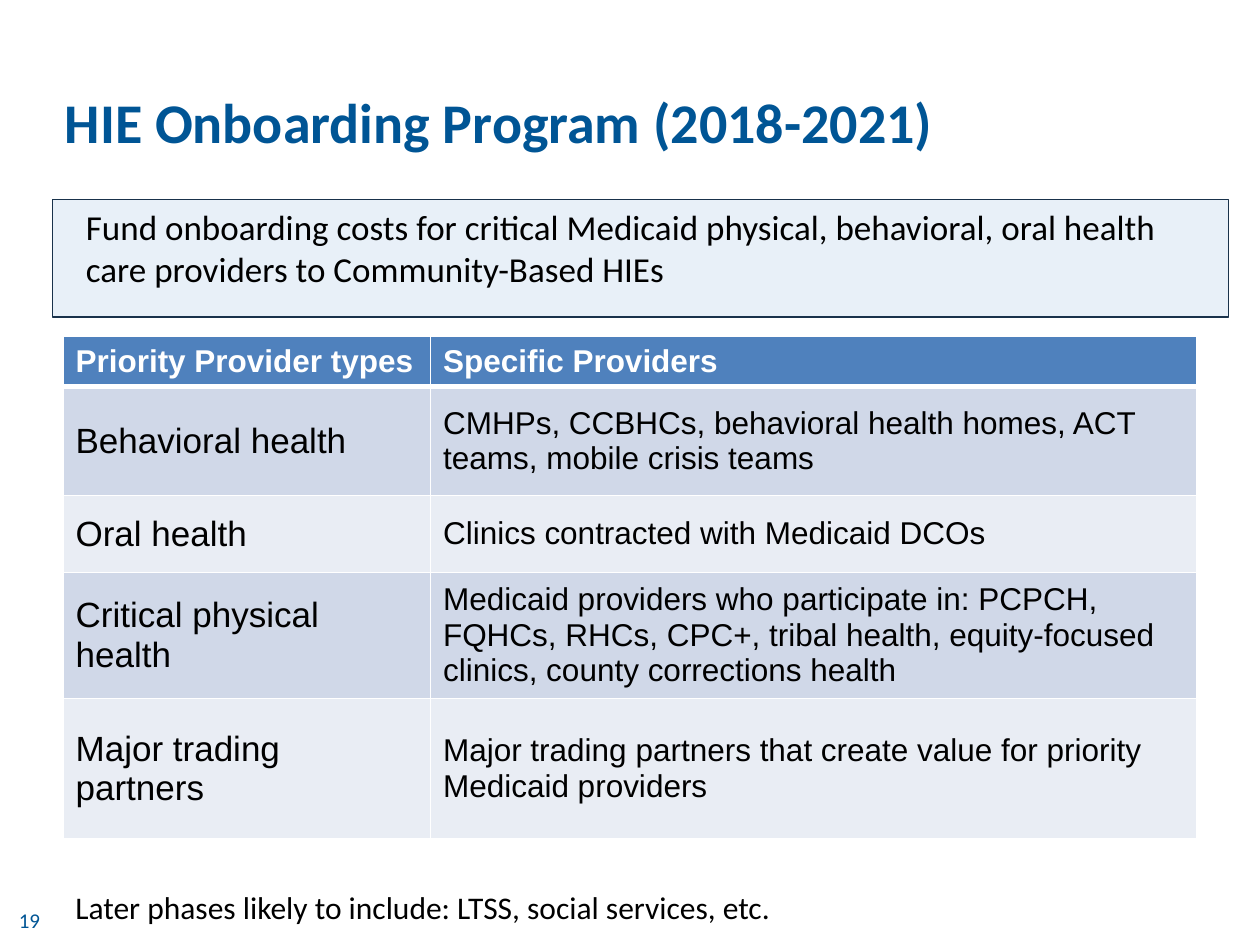
from lxml import etree
from pptx import Presentation
from pptx.dml.color import RGBColor
from pptx.enum import shapes, text
from pptx.oxml import ns
from pptx.util import Inches, Pt

HUES = {"blue": "005595", "navy": "19324B", "pale": "E8F0F8", "head": "4F81BD",
        "odd": "D0D8E8", "even": "E9EDF4", "black": "000000", "white": "FFFFFF"}

# The slide is a grid of 120 columns by 90 rows
COLS, ROWS = 120, 90
WIDE, HIGH = Inches(10), Inches(7.5)

TYPES = [
    ("Priority Provider types", "Specific Providers"),
    ("Behavioral health",
     "CMHPs, CCBHCs, behavioral health homes, ACT teams, mobile crisis teams"),
    ("Oral health", "Clinics contracted with Medicaid DCOs"),
    ("Critical physical health",
     "Medicaid providers who participate in: PCPCH, FQHCs, RHCs, CPC+, "
     "tribal health, equity-focused clinics, county corrections health"),
    ("Major trading partners",
     "Major trading partners that create value for priority Medicaid providers"),
]


def hue(name):
    return RGBColor.from_string(HUES[name])


def span(x, y, w, h):
    return (round(x * WIDE / COLS), round(y * HIGH / ROWS),
            round(w * WIDE / COLS), round(h * HIGH / ROWS))


def style(par, size, color, bold=False, face="Calibri"):
    font = par.font
    font.name, font.size, font.bold = face, Pt(size), bold
    font.color.rgb = hue(color)


def label(slide, box, words, size, color="black", bold=False,
          anchor=text.MSO_ANCHOR.TOP, align=text.PP_ALIGN.LEFT):
    frame = slide.shapes.add_textbox(*span(*box)).text_frame
    frame.word_wrap = True
    frame.vertical_anchor = anchor
    par = frame.paragraphs[0]
    par.text, par.alignment = words, align
    style(par, size, color, bold)


def banner(slide, box, words):
    x, y, w, h = box
    panel = slide.shapes.add_shape(shapes.MSO_SHAPE.RECTANGLE, *span(*box))
    panel.shadow.inherit = False
    panel.fill.solid()
    panel.fill.fore_color.rgb = hue("pale")
    panel.line.color.rgb = hue("navy")
    panel.line.width = Pt(0.75)
    label(slide, (x + 2, y, w - 5, h - 2), words, 20)


def edge(cell, side, width):
    props = cell._tc.get_or_add_tcPr()
    line = etree.SubElement(props, ns.qn("a:" + side), w=str(Pt(width)))
    fill = etree.SubElement(line, ns.qn("a:solidFill"))
    etree.SubElement(fill, ns.qn("a:srgbClr"), val=HUES["white"])


def grid(slide, box, rows, widths, heights):
    table = slide.shapes.add_table(len(rows), len(widths), *span(*box)).table
    for col, width in zip(table.columns, widths):
        col.width = span(0, 0, width, 0)[2]
    for r, (row, height) in enumerate(zip(rows, heights)):
        table.rows[r].height = span(0, 0, 0, height)[3]
        head = r == 0
        for c, words in enumerate(row):
            cell = table.cell(r, c)
            cell.vertical_anchor = text.MSO_ANCHOR.MIDDLE
            par = cell.text_frame.paragraphs[0]
            par.text = words
            style(par, 18 if head or c else 20, "white" if head else "black",
                  head, "Arial")
            # Borders come before the fill in the cell properties
            for side in ("lnL", "lnR", "lnT", "lnB"):
                thick = (head and side == "lnB") or (r == 1 and side == "lnT")
                edge(cell, side, 3 if thick else 1)
            cell.fill.solid()
            cell.fill.fore_color.rgb = hue(
                "head" if head else "odd" if r % 2 else "even")


def main():
    deck = Presentation()
    deck.slide_width, deck.slide_height = WIDE, HIGH
    slide = deck.slides.add_slide(deck.slide_layouts[6])
    mid = text.MSO_ANCHOR.MIDDLE

    # Title
    label(slide, (5, 4, 108, 15), "HIE Onboarding Program (2018-2021)", 32,
          "blue", True, mid)
    # Provider table
    grid(slide, (6, 32, 108, 48), TYPES, (35, 73), (4.2, 10.4, 7.3, 10.4, 13.4))
    # Page number and closing note
    label(slide, (0, 85.2, 5, 4.8), "19", 12, "blue", anchor=mid,
          align=text.PP_ALIGN.RIGHT)
    label(slide, (6, 84, 78, 5),
          "Later phases likely to include: LTSS, social services, etc.", 18)
    # Purpose banner
    banner(slide, (5, 19, 112, 11.2),
           "Fund onboarding costs for critical Medicaid physical, behavioral, "
           "oral health care providers to Community-Based HIEs")

    deck.save("out.pptx")


if __name__ == "__main__":
    main()
